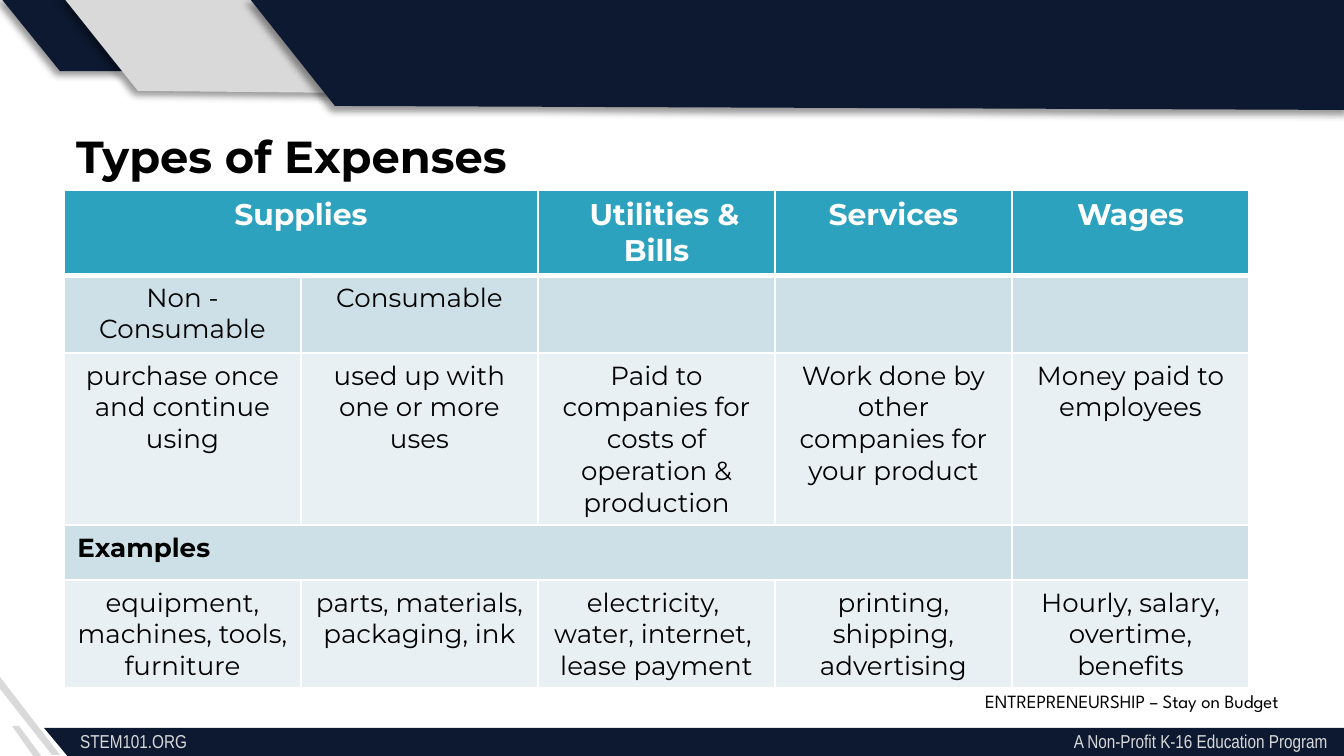
from dataclasses import dataclass

import pptx
import pptx.dml.color
import pptx.enum.text
import pptx.oxml
import pptx.oxml.ns
import pptx.util

EMU_PER_PX = 914400 / 134.4
ALIGN = pptx.enum.text.PP_ALIGN


@dataclass(frozen=True)
class Theme:
    navy: str = "0C1930"
    grey: str = "D9D9D9"
    teal: str = "2DA2BF"
    band_dark: str = "CDE0E8"
    band_light: str = "E8F0F4"
    white: str = "FFFFFF"
    black: str = "000000"
    heading_font: str = "Montserrat"
    label_font: str = "League Spartan"
    footer_font: str = "Arial Narrow"
    title_size: int = 24
    header_size: int = 16
    body_size: int = 14
    small_size: int = 10


THEME = Theme()

# Backdrop outlines: fill, shadow, corner points
OUTLINES = [
    (THEME.navy, True, [(60, 71), (0, -3), (65, -3), (125, 71)]),
    (THEME.grey, True, [(138, 91), (63, -3), (274, -3), (348, 93)]),
    (THEME.navy, True, [(335, 106), (250, -1), (1347, -1), (1349, 110)]),
    (THEME.grey, False, [(42, 757), (34, 757), (12, 726), (19, 726)]),
    (THEME.grey, False, [(60, 755), (52, 755), (0, 689), (0, 677)]),
    (THEME.navy, False, [(1352, 759), (69, 758), (44, 728), (1353, 728)]),
]

ROW_HEIGHTS = [84, 78, 172, 55, 108]
COLUMN_WIDTH = 237
ROW_FILLS = [THEME.teal, THEME.band_dark, THEME.band_light,
             THEME.band_dark, THEME.band_light]
EXPENSES = [
    ["Supplies", "", "Utilities & Bills", "Services", "Wages"],
    ["Non - Consumable", "Consumable", "", "", ""],
    ["purchase once and continue using", "used up with one or more uses",
     "Paid to companies for costs of operation & production",
     "Work done by other companies for your product",
     "Money paid to employees"],
    ["Examples", "", "", "", ""],
    ["equipment, machines, tools, furniture",
     "parts, materials, packaging, ink",
     "electricity, \nwater, internet, \nlease payment",
     "printing, shipping, advertising",
     "Hourly, salary, overtime, benefits"],
]


def px(length):
    return pptx.util.Emu(round(length * EMU_PER_PX))


def rgb(color):
    return pptx.dml.color.RGBColor.from_string(color)


def add_xml(parent, tag, content="", **attributes):
    text = "".join(f' {name}="{value}"' for name, value in attributes.items())
    namespace = pptx.oxml.ns.nsdecls("a")
    parent.append(pptx.oxml.parse_xml(
        f"<a:{tag} {namespace}{text}>{content}</a:{tag}>"))


def style_paragraph(paragraph, font, size, color, bold=False, align=ALIGN.LEFT):
    paragraph.alignment = align
    paragraph.font.name = font
    paragraph.font.size = pptx.util.Pt(size)
    paragraph.font.color.rgb = rgb(color)
    paragraph.font.bold = bold


def add_outline(slide, fill, shadow, points):
    builder = slide.shapes.build_freeform(*points[0], scale=EMU_PER_PX)
    builder.add_line_segments(points[1:], close=True)
    shape = builder.convert_to_shape()
    shape.fill.solid()
    shape.fill.fore_color.rgb = rgb(fill)
    shape.line.fill.background()
    shape.shadow.inherit = False
    if shadow:
        effects = shape._element.spPr.find(pptx.oxml.ns.qn("a:effectLst"))
        add_xml(effects, "outerShdw",
                '<a:srgbClr val="000000"><a:alpha val="40000"/></a:srgbClr>',
                blurRad=pptx.util.Pt(4), dist=pptx.util.Pt(3),
                dir=135 * 60000, algn="tr", rotWithShape=0)


def add_text(slide, box, text, font, size, color, bold=False, right_tab=None):
    shape = slide.shapes.add_textbox(*map(px, box))
    shape.text_frame.word_wrap = True
    paragraph = shape.text_frame.paragraphs[0]
    paragraph.text = text
    if right_tab:
        add_xml(paragraph._p.get_or_add_pPr(), "tabLst",
                f'<a:tab pos="{px(right_tab)}" algn="r"/>')
    style_paragraph(paragraph, font, size, color, bold)


def add_borders(cell, bottom_width):
    properties = cell._tc.get_or_add_tcPr()
    for side, width in (("L", 1), ("R", 1), ("T", 1), ("B", bottom_width)):
        add_xml(properties, f"ln{side}",
                f'<a:solidFill><a:srgbClr val="{THEME.white}"/></a:solidFill>',
                w=pptx.util.Pt(width))


def add_expense_table(slide):
    columns = len(EXPENSES[0])
    frame = slide.shapes.add_table(
        len(EXPENSES), columns, px(64), px(190),
        px(columns * COLUMN_WIDTH), px(sum(ROW_HEIGHTS)))
    table = frame.table
    table.horz_banding = False
    for column in table.columns:
        column.width = px(COLUMN_WIDTH)

    for row, texts in enumerate(EXPENSES):
        table.rows[row].height = px(ROW_HEIGHTS[row])
        is_header = row == 0
        for column, text in enumerate(texts):
            cell = table.cell(row, column)
            cell.text = text
            add_borders(cell, 3 if is_header else 1)
            cell.fill.solid()
            cell.fill.fore_color.rgb = rgb(ROW_FILLS[row])
            is_label = text == "Examples"
            for paragraph in cell.text_frame.paragraphs:
                style_paragraph(
                    paragraph, THEME.heading_font,
                    THEME.header_size if is_header else THEME.body_size,
                    THEME.white if is_header else THEME.black,
                    bold=is_header or is_label,
                    align=ALIGN.LEFT if is_label else ALIGN.CENTER)

    # First line of the utilities heading sits a little to the right
    utilities = table.cell(0, 2).text_frame.paragraphs[0]
    utilities._p.get_or_add_pPr().set("indent", str(px(16)))

    # Merged headings
    table.cell(0, 0).merge(table.cell(0, 1))
    table.cell(3, 0).merge(table.cell(3, 3))


def main():
    presentation = pptx.Presentation()
    presentation.slide_width = px(1344)
    presentation.slide_height = px(756)
    slide = presentation.slides.add_slide(presentation.slide_layouts[6])

    # Backdrop and footer
    for fill, shadow, points in OUTLINES:
        add_outline(slide, fill, shadow, points)
    add_text(slide, (67, 723, 1277, 36),
             "STEM101.ORG\tA Non-Profit K-16 Education Program",
             THEME.footer_font, THEME.small_size, THEME.grey, right_tab=1247)

    # Title, table and lesson label
    add_text(slide, (63, 122, 1142, 80), "Types of Expenses",
             THEME.heading_font, THEME.title_size, THEME.black, bold=True)
    add_expense_table(slide)
    add_text(slide, (972, 683, 360, 36), "ENTREPRENEURSHIP – Stay on Budget",
             THEME.label_font, THEME.small_size, THEME.black)

    presentation.save("out.pptx")


if __name__ == "__main__":
    main()
